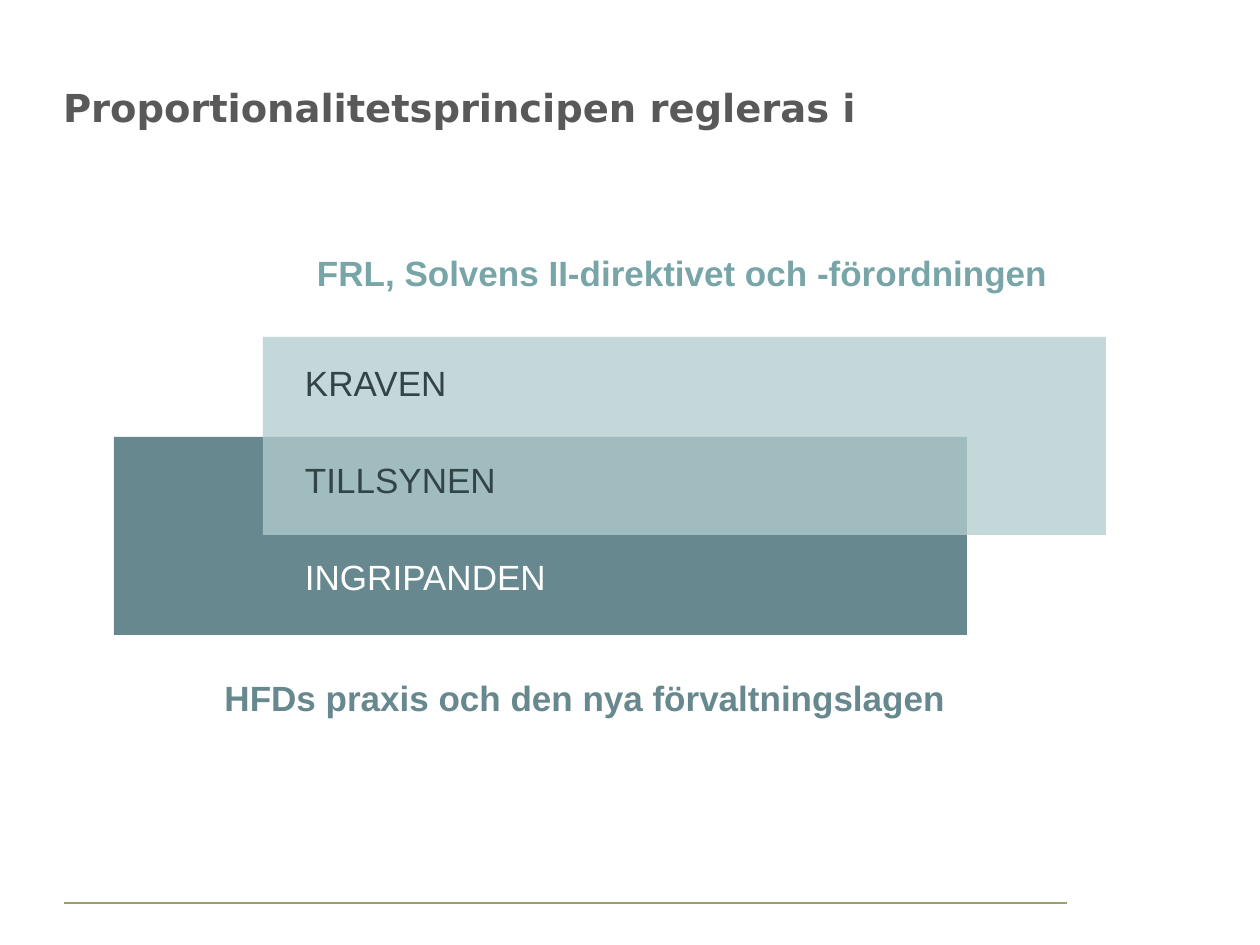
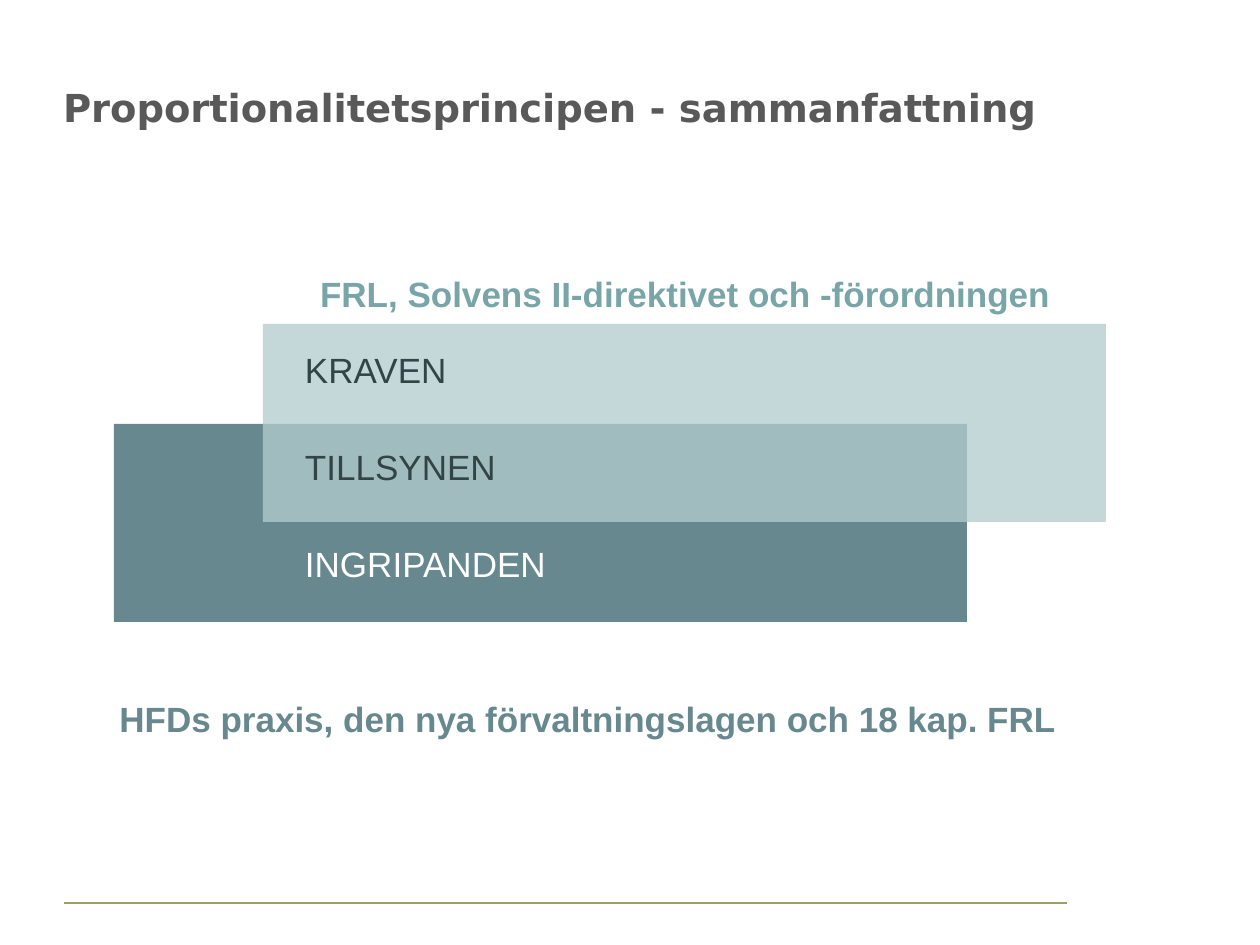
from lxml import etree
from pptx import Presentation
from pptx import util as u
from pptx.dml.color import RGBColor
from pptx.enum import shapes, text as t
from pptx.oxml.ns import qn

PX = 914400 / 126
SLIDE_WIDTH, SLIDE_HEIGHT = 1260, 945

COLORS = {
    "white": "FFFFFF",
    "title": "595959",
    "rule": "9BA064",
    "law_band": "B3CCCE",
    "law_text": "78A5A8",
    "practice": "67888E",
    "dark_label": "334447",
}

# Label text and colour, from the top band down
LABELS = [
    ("KRAVEN", "dark_label"),
    ("TILLSYNEN", "dark_label"),
    ("INGRIPANDEN", "white"),
]
LABEL_STEP = 97


def px(length):
    return u.Emu(round(length * PX))


def color(name):
    return RGBColor.from_string(COLORS[name])


def write(shape, content, *, fill, size=20, font="Arial", bold=False,
          align=t.PP_ALIGN.LEFT, anchor=t.MSO_ANCHOR.TOP,
          inset=(0, 0), line_spacing=1.0):
    """Fill a shape with one formatted paragraph; inset is (x, y) in px."""
    frame = shape.text_frame
    frame.word_wrap = True
    frame.auto_size = t.MSO_AUTO_SIZE.NONE
    frame.vertical_anchor = anchor
    frame.margin_left = frame.margin_right = px(inset[0])
    frame.margin_top = frame.margin_bottom = px(inset[1])
    paragraph = frame.paragraphs[0]
    paragraph.text = content
    paragraph.alignment = align
    paragraph.line_spacing = line_spacing
    paragraph.font.name = font
    paragraph.font.size = u.Pt(size)
    paragraph.font.bold = bold
    paragraph.font.color.rgb = color(fill)


def add_text(parent, content, left, top, width, height, **style):
    box = parent.shapes.add_textbox(px(left), px(top), px(width), px(height))
    write(box, content, **style)


def add_band(parent, left, top, width, height, fill, opacity=100):
    band = parent.shapes.add_shape(
        shapes.MSO_SHAPE.RECTANGLE, px(left), px(top), px(width), px(height))
    band.shadow.inherit = False
    band.line.fill.background()
    band.fill.solid()
    band.fill.fore_color.rgb = color(fill)
    if opacity < 100:
        rgb = band.fill._xPr.find(".//" + qn("a:srgbClr"))
        etree.SubElement(rgb, qn("a:alpha"), val=str(opacity * 1000))


def add_footer_rule(slide):
    rule = slide.shapes.add_connector(
        shapes.MSO_CONNECTOR.STRAIGHT, px(64), px(903), px(1067), px(903))
    rule.line.color.rgb = color("rule")
    rule.line.width = u.Pt(0.75)
    etree.SubElement(rule._element.spPr, qn("a:effectLst"))


def add_title_slide(presentation, title):
    slide = presentation.slides.add_slide(presentation.slide_layouts[5])
    add_footer_rule(slide)
    shape = slide.shapes.title
    shape.left, shape.top, shape.width, shape.height = map(
        px, (63, 47, 1131, 89))
    write(shape, title, fill="title", size=22, font="DejaVu Sans", bold=True,
          anchor=t.MSO_ANCHOR.BOTTOM, inset=(0, 6))
    return slide


def add_sources(slide, law, practice, left, top):
    """Legal sources above and below the overlapping bands."""
    add_text(slide, law, left + 253, top, 789, 42, fill="law_text", bold=True)
    add_text(slide, practice, left, top + 425, 1042, 42, fill="practice",
             bold=True, align=t.PP_ALIGN.CENTER)


def add_overlap(slide, top):
    """Two bands that share the middle row, with one label per row."""
    group = slide.shapes.add_group_shape()
    add_band(group, 114, top + 100, 853, 198, "practice")
    add_band(group, 263, top, 843, 198, "law_band", opacity=77)
    for row, (label, fill) in enumerate(LABELS):
        add_text(group, label, 292, top + 22 + row * LABEL_STEP, 545, 53,
                 fill=fill, inset=(13, 6), line_spacing=0.95)


def main():
    presentation = Presentation()
    presentation.slide_width = px(SLIDE_WIDTH)
    presentation.slide_height = px(SLIDE_HEIGHT)
    law = "FRL, Solvens II-direktivet och -förordningen"

    # Where the principle is regulated
    slide = add_title_slide(presentation,
                            "Proportionalitetsprincipen regleras i")
    add_sources(slide, law, "HFDs praxis och den nya förvaltningslagen",
                left=64, top=251)
    add_overlap(slide, top=337)

    # Summary
    slide = add_title_slide(presentation,
                            "Proportionalitetsprincipen - sammanfattning")
    add_sources(slide, law,
                "HFDs praxis, den nya förvaltningslagen och 18 kap. FRL",
                left=67, top=272)
    add_overlap(slide, top=324)

    presentation.save("out.pptx")


if __name__ == "__main__":
    main()
